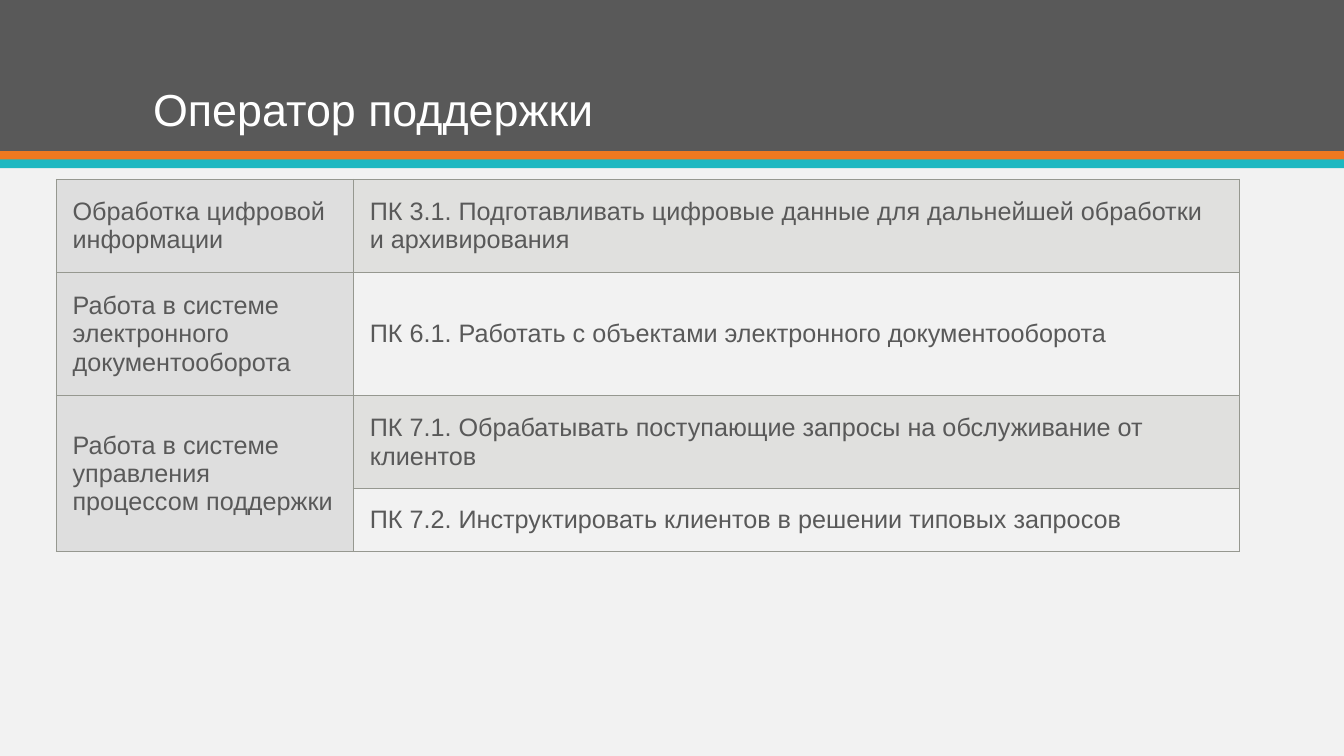
from lxml import etree
from pptx import Presentation
from pptx.dml.color import RGBColor
from pptx.enum import shapes, text
from pptx.oxml.ns import qn
from pptx.util import Cm, Pt

TITLE = "Оператор поддержки"
MODULES = [
    ("Обработка цифровой информации", [
        "ПК 3.1. Подготавливать цифровые данные для дальнейшей обработки и архивирования"]),
    ("Работа в системе электронного документооборота", [
        "ПК 6.1. Работать с объектами электронного документооборота"]),
    ("Работа в системе управления процессом поддержки", [
        "ПК 7.1. Обрабатывать поступающие запросы на обслуживание от клиентов",
        "ПК 7.2. Инструктировать клиентов в решении типовых запросов"]),
]
COLORS = {
    "background": "F2F2F2", "header": "595959", "orange": "EF7920", "teal": "1EB8C1",
    "title": "FFFFFF", "text": "595959", "module": "DEDEDE", "band": "E0E0DE",
    "border": "969890",
}
FONT = "Arial"
SLIDE_WIDTH, SLIDE_HEIGHT = Cm(33.87), Cm(19.05)
BANDS = [("header", 0, 3.81), ("orange", 3.81, 0.22), ("teal", 4.02, 0.22)]
COLUMN_WIDTHS = [Cm(7.49), Cm(22.33)]
ROW_HEIGHTS = [Cm(2.22), Cm(2.95), Cm(2.22), Cm(1.51)]
CELL_MARGIN = Cm(0.41)


def rgb(name):
    return RGBColor.from_string(COLORS[name])


def style(paragraph, size, color):
    paragraph.font.name = FONT
    paragraph.font.size = Pt(size)
    paragraph.font.color.rgb = rgb(color)


def add_borders(cell):
    properties = cell._tc.get_or_add_tcPr()
    for position, side in enumerate(("lnL", "lnR", "lnT", "lnB")):
        line = etree.Element(qn(f"a:{side}"), w=str(Pt(1)))
        fill = etree.SubElement(line, qn("a:solidFill"))
        etree.SubElement(fill, qn("a:srgbClr"), val=COLORS["border"])
        properties.insert(position, line)


def fill_cell(cell, wording, color):
    """Write the wording, if any, and give the cell its fill, margins and borders."""
    cell.margin_left = cell.margin_right = CELL_MARGIN
    cell.margin_top = cell.margin_bottom = CELL_MARGIN
    cell.vertical_anchor = text.MSO_ANCHOR.MIDDLE
    cell.text = wording
    style(cell.text_frame.paragraphs[0], 18, "text")
    if color:
        cell.fill.solid()
        cell.fill.fore_color.rgb = rgb(color)
    else:
        cell.fill.background()
    add_borders(cell)


def add_header(slide):
    for color, top, height in BANDS:
        band = slide.shapes.add_shape(
            shapes.MSO_SHAPE.RECTANGLE, 0, Cm(top), SLIDE_WIDTH, Cm(height))
        band.shadow.inherit = False
        band.fill.solid()
        band.fill.fore_color.rgb = rgb(color)
        band.line.fill.background()
    frame = slide.shapes.add_textbox(Cm(3.61), Cm(0.69), Cm(26.67), Cm(2.87)).text_frame
    frame.word_wrap = True
    frame.vertical_anchor = text.MSO_ANCHOR.BOTTOM
    heading = frame.paragraphs[0]
    heading.text = TITLE
    heading.line_spacing = 0.9
    style(heading, 32, "title")


def add_competencies(slide):
    table = slide.shapes.add_table(
        len(ROW_HEIGHTS), len(COLUMN_WIDTHS), Cm(1.42), Cm(4.52),
        sum(COLUMN_WIDTHS), sum(ROW_HEIGHTS)).table
    table.first_row = table.horz_banding = False
    for column, width in zip(table.columns, COLUMN_WIDTHS):
        column.width = width
    for row, height in zip(table.rows, ROW_HEIGHTS):
        row.height = height

    row = 0
    for module, skills in MODULES:
        first = row
        for skill in skills:
            fill_cell(table.cell(row, 0), module if row == first else "", "module")
            fill_cell(table.cell(row, 1), skill, None if row % 2 else "band")
            row += 1
        if len(skills) > 1:
            table.cell(first, 0).merge(table.cell(row - 1, 0))


def main():
    deck = Presentation()
    deck.slide_width, deck.slide_height = SLIDE_WIDTH, SLIDE_HEIGHT
    slide = deck.slides.add_slide(deck.slide_layouts[6])
    slide.background.fill.solid()
    slide.background.fill.fore_color.rgb = rgb("background")
    add_header(slide)
    add_competencies(slide)
    deck.save("out.pptx")


if __name__ == "__main__":
    main()
